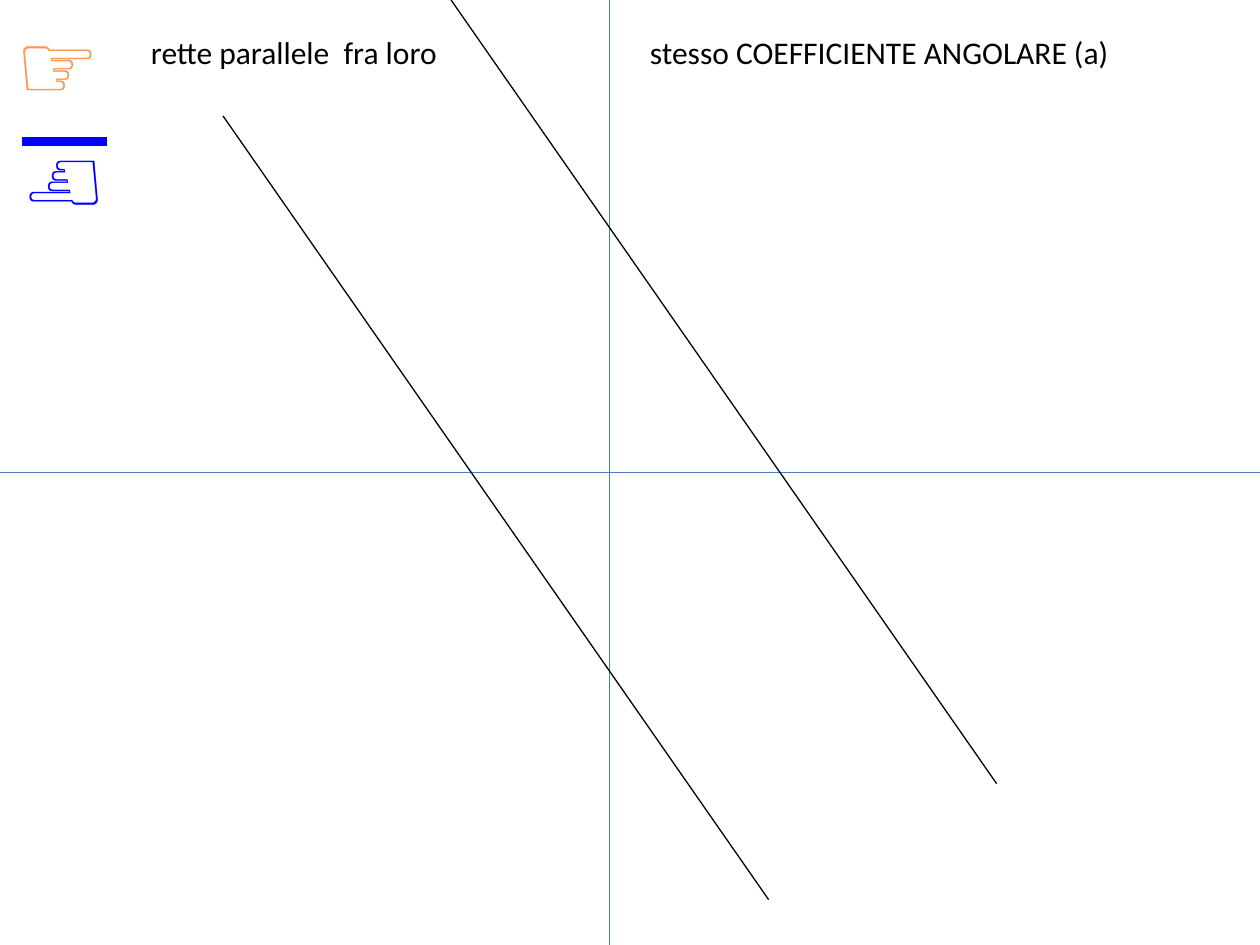
from lxml.etree import SubElement
from pptx import Presentation
from pptx.dml.color import RGBColor
from pptx.enum.shapes import MSO_CONNECTOR
from pptx.enum.text import MSO_AUTO_SIZE, PP_ALIGN
from pptx.oxml.ns import qn
from pptx.util import Inches, Pt

ORANGE = RGBColor(0xFF, 0x98, 0x56)
BLUE = RGBColor(0x00, 0x00, 0xFF)
AXIS_BLUE = RGBColor(0x4B, 0x7E, 0xBC)
BLACK = RGBColor(0x00, 0x00, 0x00)

COLUMNS, ROWS = 100, 75


class SlideBuilder:
    """Places elements on a grid of COLUMNS by ROWS."""

    font_name = "Calibri"
    line_width = Pt(0.75)

    def __init__(self, deck):
        self.slide = deck.slides.add_slide(deck.slide_layouts[6])
        self.column = deck.slide_width / COLUMNS
        self.row = deck.slide_height / ROWS

    def place(self, x, y):
        return round(x * self.column), round(y * self.row)

    def text(self, words, at, size, color, align=PP_ALIGN.LEFT, wrap=True,
             rotation=0, tab=None, **style):
        left, top, width, height = at
        box = self.slide.shapes.add_textbox(
            *self.place(left, top), *self.place(width, height))
        box.rotation = rotation
        frame = box.text_frame
        frame.word_wrap = wrap
        frame.auto_size = MSO_AUTO_SIZE.SHAPE_TO_FIT_TEXT
        para = frame.paragraphs[0]
        para.alignment = align
        if tab is not None:
            stops = SubElement(para._p.get_or_add_pPr(), qn("a:tabLst"))
            SubElement(stops, qn("a:tab"), pos=str(round(tab * self.column)), algn="l")
        span = para.add_run()
        span.text = words
        values = {"name": self.font_name, "size": Pt(size), **style}
        for name, value in values.items():
            setattr(span.font, name, value)
        span.font.color.rgb = color

    def line(self, start, end, color):
        line = self.slide.shapes.add_connector(
            MSO_CONNECTOR.STRAIGHT, *self.place(*start), *self.place(*end))
        line.line.color.rgb = color
        line.line.width = self.line_width
        SubElement(line._element.spPr, qn("a:effectLst"))


def main():
    deck = Presentation()
    deck.slide_width, deck.slide_height = Inches(10), Inches(7.5)
    page = SlideBuilder(deck)

    # Pointing hands
    hand = {"size": 54, "align": PP_ALIGN.CENTER, "bold": True}
    page.text("☞", (0, 0, 9.2, 10.1), color=ORANGE, wrap=False, **hand)
    page.text("☞", (0, 9.9, 10.2, 10.1), color=BLUE, rotation=180,
              underline=True, **hand)

    # Statement in two parts, the second set at a tab stop
    page.text("rette parallele  fra loro\tstesso COEFFICIENTE ANGOLARE (a)",
              (11, 2.1, 89, 4), size=18, color=BLACK, tab=39.6)

    # Axes
    origin_x, origin_y = 48.4, ROWS / 2
    page.line((origin_x, 0), (origin_x, ROWS), AXIS_BLUE)
    page.line((0, origin_y), (COLUMNS, origin_y), AXIS_BLUE)

    # Parallel lines share one run and fall
    run, fall = 43.3, 62.2
    for x, y in ((17.7, 9.2), (35.8, 0)):
        page.line((x, y), (x + run, y + fall), BLACK)

    deck.save("out.pptx")


if __name__ == "__main__":
    main()
